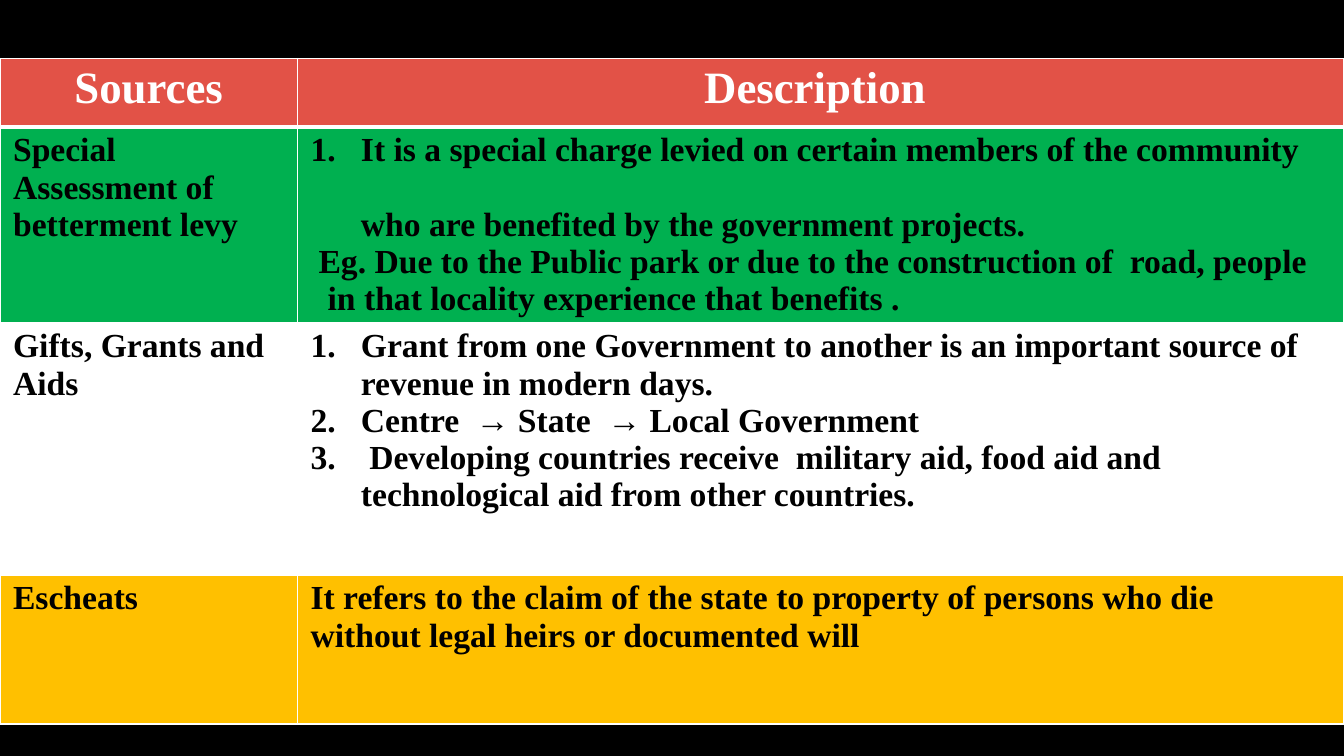
"""Build a slide with a table of non-tax revenue sources."""
from lxml.etree import SubElement
from pptx import Presentation
from pptx.dml.color import RGBColor
from pptx.enum.text import PP_ALIGN as Align
from pptx.oxml.ns import qn
from pptx.util import Inches, Pt

BLACK = RGBColor(0x00, 0x00, 0x00)
WHITE = RGBColor(0xFF, 0xFF, 0xFF)
CORAL = RGBColor(0xE2, 0x52, 0x47)
GREEN = RGBColor(0x00, 0xB0, 0x50)
AMBER = RGBColor(0xFF, 0xC0, 0x00)

HEADER_FORMAT = {"size": Pt(32), "color": WHITE, "align": Align.CENTER}
BODY_FORMAT = {"size": Pt(24), "color": BLACK, "align": Align.LEFT}
NUMBERED = {"left": 0.5, "hanging": 0.5, "number": True}
CONTINUED = {"left": 0.5, "before": 26.6}
EXAMPLE = {"left": 0.17, "hanging": 0.09}

SOURCES = [
    (CORAL, 0.68, [("Sources", {})], [("Description ", {})]),
    (GREEN, 1.76, [("Special Assessment of betterment levy", {})], [
        ("It is a special charge levied on certain members of the community", NUMBERED),
        ("who are benefited by the government projects.", CONTINUED),
        ("Eg. Due to the Public park or due to the construction of  road, people "
         "in that locality experience that benefits .", EXAMPLE),
    ]),
    (WHITE, 2.5, [("Gifts, Grants and Aids", {})], [
        ("Grant from one Government to another is an important source of "
         "revenue in modern days.", NUMBERED),
        ("Centre  → State  → Local Government", NUMBERED),
        (" Developing countries receive  military aid, food aid and "
         "technological aid from other countries.", NUMBERED),
    ]),
    (AMBER, 1.48, [("Escheats", {})], [
        ("It refers to the claim of the state to property of persons who die "
         "without legal heirs or documented will", {}),
    ]),
]


class SlideBuilder:
    """Hold the style and the current slide."""

    def __init__(self, slide, font_name):
        self.slide = slide
        self.font_name = font_name

    def background(self, color):
        fill = self.slide.background.fill
        fill.solid()
        fill.fore_color.rgb = color

    def border(self, cell, side, points):
        line = SubElement(cell._tc.get_or_add_tcPr(), qn(f"a:ln{side}"), w=str(Pt(points)))
        SubElement(SubElement(line, qn("a:solidFill")), qn("a:srgbClr"), val=str(WHITE))

    def paragraph(self, paragraph, text, layout, style):
        paragraph.alignment = style["align"]
        if "before" in layout:
            paragraph.space_before = Pt(layout["before"])
        properties = paragraph._p.get_or_add_pPr()
        properties.set("marL", str(Inches(layout.get("left", 0))))
        properties.set("indent", str(-Inches(layout.get("hanging", 0))))
        if layout.get("number"):
            SubElement(properties, qn("a:buFont"), typeface=self.font_name)
            SubElement(properties, qn("a:buAutoNum"), type="arabicPeriod")
        run = paragraph.add_run()
        run.text = text
        for name, value in {"name": self.font_name, "size": style["size"], "bold": True}.items():
            setattr(run.font, name, value)
        run.font.color.rgb = style["color"]

    def cell(self, cell, color, paragraphs, style, borders):
        margins = {"margin_left": 0.13, "margin_right": 0.13,
                   "margin_top": 0.05, "margin_bottom": 0.05}
        for name, value in margins.items():
            setattr(cell, name, Inches(value))
        for side, points in borders.items():
            self.border(cell, side, points)
        cell.fill.solid()
        cell.fill.fore_color.rgb = color
        frame = cell.text_frame
        for index, (text, layout) in enumerate(paragraphs):
            target = frame.add_paragraph() if index else frame.paragraphs[0]
            self.paragraph(target, text, layout, style)

    def table(self, rows, widths, left, top):
        height = sum(row[1] for row in rows)
        table = self.slide.shapes.add_table(
            len(rows), len(widths), Inches(left), Inches(top),
            Inches(sum(widths)), Inches(height)).table
        table.horz_banding = False
        for column, width in zip(table.columns, widths):
            column.width = Inches(width)
        for index, (color, row_height, *contents) in enumerate(rows):
            table.rows[index].height = Inches(row_height)
            style = BODY_FORMAT if index else HEADER_FORMAT
            borders = {"L": 1, "R": 1, "T": 3 if index == 1 else 1, "B": 1 if index else 3}
            for column, paragraphs in enumerate(contents):
                self.cell(table.cell(index, column), color, paragraphs, style, borders)


def main():
    presentation = Presentation()
    presentation.slide_width = Inches(13.33)
    presentation.slide_height = Inches(7.5)
    slide = presentation.slides.add_slide(presentation.slide_layouts[6])
    builder = SlideBuilder(slide, "Times New Roman")
    builder.background(BLACK)
    builder.table(SOURCES, widths=(2.95, 10.38), left=0, top=0.58)
    presentation.save("out.pptx")


if __name__ == "__main__":
    main()
